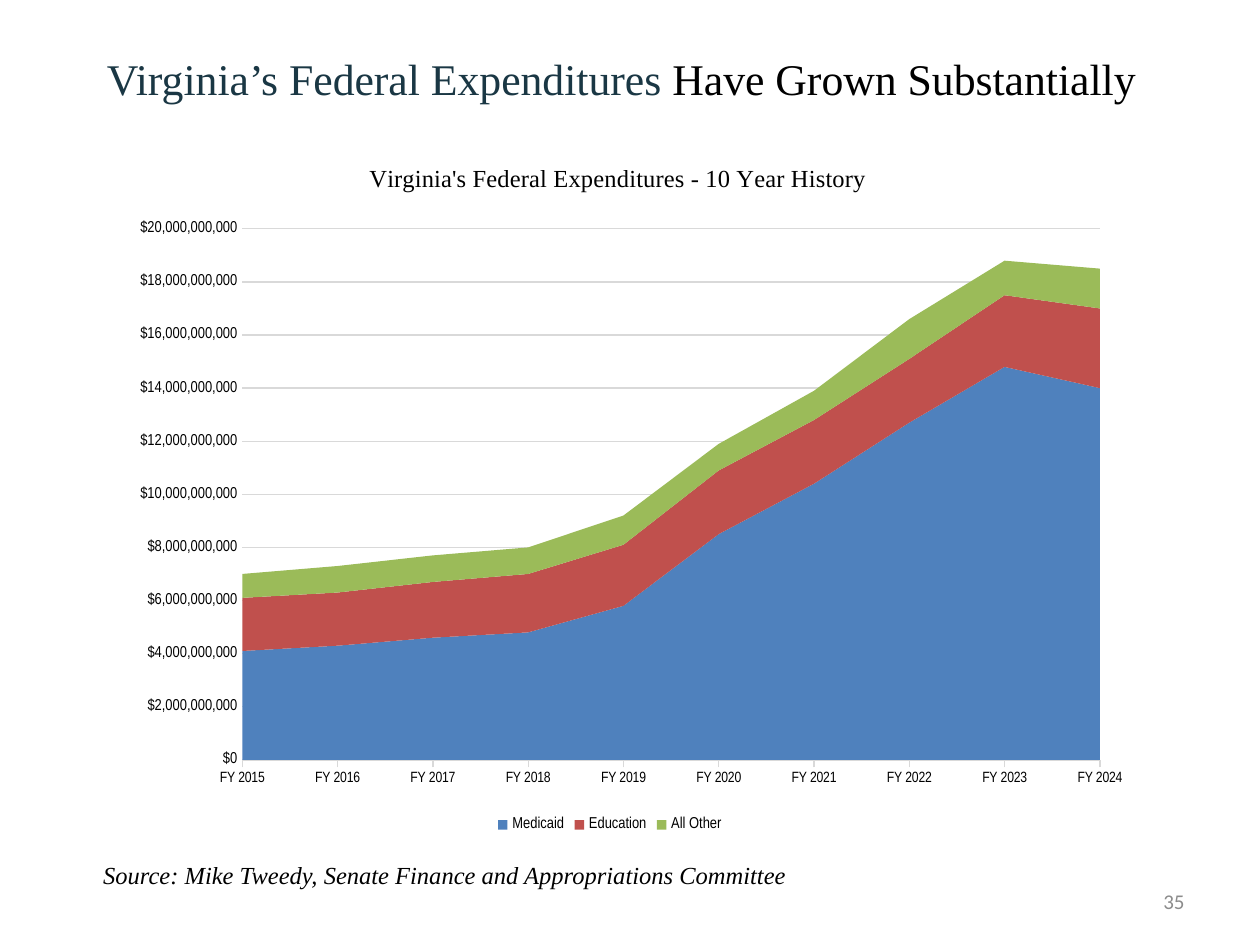
from dataclasses import dataclass

import pptx
import pptx.chart.data
import pptx.dml.color
import pptx.enum.chart
import pptx.enum.text
import pptx.oxml
import pptx.oxml.ns
import pptx.util
from pptx.util import Inches


@dataclass(frozen=True)
class Theme:
    serif: str = "Times New Roman"
    narrow: str = "Arial Narrow"
    sans: str = "Calibri"
    ink: str = "000000"
    heading: str = "1A3744"
    muted: str = "8C8C8C"
    rule: str = "D9D9D9"
    heading_size: float = 25
    body_size: float = 14
    number_size: float = 12
    chart_size: float = 10
    label_size: float = 9
    category_size: float = 8.5


@dataclass(frozen=True)
class Area:
    left: float
    top: float
    width: float
    height: float


@dataclass(frozen=True)
class Span:
    text: str
    font: str
    size: float
    color: str
    italic: bool = False


@dataclass(frozen=True)
class Spending:
    name: str
    color: str
    billions: tuple[float, ...]


THEME = Theme()
YEARS = [f"FY {year}" for year in range(2015, 2025)]
SPENDING = (
    Spending("Medicaid", "4F81BD", (4.1, 4.3, 4.6, 4.8, 5.8, 8.5, 10.4, 12.7, 14.8, 14)),
    Spending("Education", "C0504D", (2, 2, 2.1, 2.2, 2.3, 2.4, 2.4, 2.4, 2.7, 3)),
    Spending("All Other", "9BBB59", (0.9, 1, 1, 1, 1.1, 1, 1.1, 1.5, 1.3, 1.5)),
)


def rgb(color: str) -> pptx.dml.color.RGBColor:
    return pptx.dml.color.RGBColor.from_string(color)


def format_font(font, name: str, size: float, color: str, italic: bool = False) -> None:
    values = {"name": name, "size": pptx.util.Pt(size), "bold": False, "italic": italic}
    for key, value in values.items():
        setattr(font, key, value)
    font.color.rgb = rgb(color)


def format_line(line, color: str) -> None:
    line.color.rgb = rgb(color)
    line.width = pptx.util.Pt(0.75)


def add_text(page, area: Area, spans: list[Span], **frame_format) -> pptx.text.text._Paragraph:
    box = page.shapes.add_textbox(
        Inches(area.left), Inches(area.top), Inches(area.width), Inches(area.height)
    )
    for key, value in {"word_wrap": True, **frame_format}.items():
        setattr(box.text_frame, key, value)
    para = box.text_frame.paragraphs[0]
    for span in spans:
        run = para.add_run()
        run.text = span.text
        format_font(run.font, span.font, span.size, span.color, span.italic)
    return para


def place(element, position: int, **fractions: float) -> None:
    """Give a chart part a manual layout in fractions of the chart area."""
    for old in element.findall(pptx.oxml.ns.qn("c:layout")):
        element.remove(old)
    target = '<c:layoutTarget val="inner"/>' if "w" in fractions else ""
    modes = "".join(f'<c:{key}Mode val="edge"/>' for key in "xy")
    values = "".join(f'<c:{key} val="{value}"/>' for key, value in fractions.items())
    layout = pptx.oxml.parse_xml(
        f'<c:layout {pptx.oxml.ns.nsdecls("c")}><c:manualLayout>'
        f"{target}{modes}{values}</c:manualLayout></c:layout>"
    )
    element.insert(position, layout)


def add_spending_chart(page, area: Area) -> None:
    data = pptx.chart.data.CategoryChartData()
    data.categories = YEARS
    for item in SPENDING:
        data.add_series(item.name, [round(value * 1e9) for value in item.billions])
    chart = page.shapes.add_chart(
        pptx.enum.chart.XL_CHART_TYPE.AREA_STACKED,
        Inches(area.left), Inches(area.top), Inches(area.width), Inches(area.height),
        data,
    ).chart
    format_font(chart.font, THEME.narrow, THEME.chart_size, THEME.ink)
    for series, item in zip(chart.plots[0].series, SPENDING):
        series.format.fill.solid()
        series.format.fill.fore_color.rgb = rgb(item.color)

    chart.has_title = True
    title = chart.chart_title
    title.include_in_layout = False
    run = title.text_frame.paragraphs[0].add_run()
    run.text = "Virginia's Federal Expenditures - 10 Year History"
    format_font(run.font, THEME.serif, THEME.body_size, THEME.ink)
    place(title._element, 1, x=0.28, y=0.04)
    place(chart._chartSpace.chart.plotArea, 0, x=0.17, y=0.14, w=0.77, h=0.75)

    tick = pptx.enum.chart.XL_TICK_MARK
    years, dollars = chart.category_axis, chart.value_axis
    years.major_tick_mark = tick.OUTSIDE
    years.has_major_gridlines = False
    format_line(years.format.line, THEME.rule)
    format_font(years.tick_labels.font, THEME.narrow, THEME.category_size, THEME.ink)

    scale = {"minimum_scale": 0, "maximum_scale": 20e9, "major_unit": 2e9,
             "major_tick_mark": tick.NONE, "has_major_gridlines": True}
    for key, value in scale.items():
        setattr(dollars, key, value)
    dollars.format.line.fill.background()
    format_line(dollars.major_gridlines.format.line, THEME.rule)
    dollars.tick_labels.number_format = r'"$"#,##0;\("$"#,##0\)'
    dollars.tick_labels.number_format_is_linked = False
    format_font(dollars.tick_labels.font, THEME.narrow, THEME.label_size, THEME.ink)

    chart.has_legend = True
    chart.legend.position = pptx.enum.chart.XL_LEGEND_POSITION.BOTTOM
    chart.legend.include_in_layout = False
    format_font(chart.legend.font, THEME.narrow, THEME.label_size, THEME.ink)


def main() -> None:
    deck = pptx.Presentation()
    deck.slide_width, deck.slide_height = Inches(10), Inches(7.5)
    page = deck.slides.add_slide(deck.slide_layouts[6])

    number = add_text(
        page, Area(7.17, 6.95, 2.33, 0.4),
        [Span("35", THEME.sans, THEME.number_size, THEME.muted)],
        vertical_anchor=pptx.enum.text.MSO_ANCHOR.MIDDLE,
    )
    number.alignment = pptx.enum.text.PP_ALIGN.RIGHT
    add_text(page, Area(0.75, 0.36, 9.68, 0.67), [
        Span("Virginia’s Federal Expenditures", THEME.serif, THEME.heading_size, THEME.heading),
        Span(" Have Grown Substantially", THEME.serif, THEME.heading_size, THEME.ink),
    ])
    add_spending_chart(page, Area(0.42, 1.03, 8.84, 5.62))
    add_text(
        page, Area(0.72, 6.78, 7.5, 0.34),
        [Span("Source: Mike Tweedy, Senate Finance and Appropriations Committee",
              THEME.serif, THEME.body_size, THEME.ink, italic=True)],
        auto_size=pptx.enum.text.MSO_AUTO_SIZE.SHAPE_TO_FIT_TEXT,
    )
    deck.save("out.pptx")


if __name__ == "__main__":
    main()
